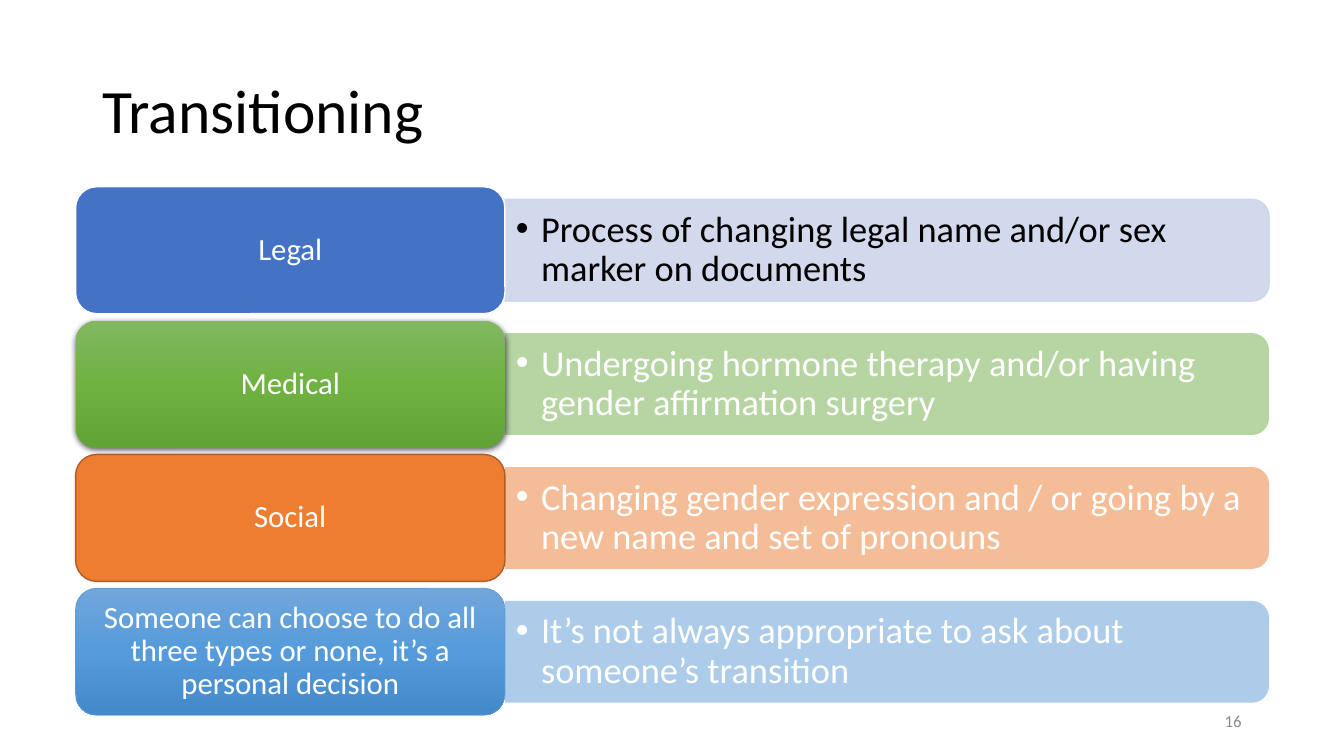
from lxml import etree
from pptx import Presentation
from pptx.dml.color import RGBColor
from pptx.enum.shapes import MSO_SHAPE
from pptx.enum.text import MSO_ANCHOR, PP_ALIGN
from pptx.oxml.ns import qn
from pptx.util import Pt

ROUND, TAB = MSO_SHAPE.ROUNDED_RECTANGLE, MSO_SHAPE.ROUND_2_SAME_RECTANGLE
MIDDLE = MSO_ANCHOR.MIDDLE
LEFT, CENTER, RIGHT = PP_ALIGN.LEFT, PP_ALIGN.CENTER, PP_ALIGN.RIGHT

COLORS = {
    "black": "000000", "white": "FFFFFF", "gray": "8C8C8C",
    "pale": "CFD5EA", "blue": "4472C4", "green": "70AD47",
    "orange": "ED7D31", "rust": "AF5C24", "sky": "5B9BD5",
}
GREENS = ("81B861", "6FB242", "62A336")
SKIES = ("71A6DB", "559BDB", "448ACA")

FONT = "Calibri"
LABEL_X, LABEL_W, LABEL_H = 54, 306.7, 90.7
BAR_X, BAR_W, BAR_H = 360.7, 545.8, 72.7
NOTE_W, NOTE_H = 542.2, 65.6
TOP, STEP = 133.4, 95.6

ROWS = [
    {"label": "Legal", "fill": "blue", "line": ("white", 1),
     "note": "Process of changing legal name and/or sex marker on documents",
     "ink": "black", "bar": "pale", "alpha": 90, "edge": ("pale", 1)},
    {"label": "Medical", "fill": GREENS, "shadow": True,
     "note": "Undergoing hormone therapy and/or having gender affirmation surgery",
     "bar": "green"},
    {"label": "Social", "fill": "orange", "line": ("rust", 1),
     "note": "Changing gender expression and / or going by a new name "
             "and set of pronouns",
     "bar": "orange"},
    {"label": "Someone can choose to do all three types or none, "
              "it’s a personal decision",
     "fill": SKIES, "line": ("sky", 0.5),
     "note": "It’s not always appropriate to ask about someone’s transition",
     "bar": "sky"},
]


def rgb(name):
    return RGBColor.from_string(COLORS[name])


def add_node(parent, tag, **attrs):
    node = etree.SubElement(parent, qn(tag))
    for key, value in attrs.items():
        node.set(key, str(value))
    return node


def set_alpha(shape, percent):
    """Make every colour of the shape's fill and line see-through."""
    for color in shape._element.spPr.iter(qn("a:srgbClr")):
        add_node(color, "a:alpha", val=percent * 1000)


def set_fade(shape, stops):
    """Fill from top to bottom with evenly spaced colours."""
    shape.fill.gradient()
    shape.fill.gradient_angle = 270
    stop_list = next(shape._element.spPr.iter(qn("a:gsLst")))
    for old in list(stop_list):
        stop_list.remove(old)
    for i, color in enumerate(stops):
        stop = add_node(stop_list, "a:gs", pos=i * 100000 // (len(stops) - 1))
        add_node(stop, "a:srgbClr", val=color)


def set_line(shape, line):
    if line is None:
        shape.line.fill.background()
        return
    name, width = line
    shape.line.color.rgb = rgb(name)
    shape.line.width = Pt(width)


def add_shadow(shape):
    effects = shape._element.spPr.find(qn("a:effectLst"))
    shadow = add_node(effects, "a:outerShdw", blurRad=Pt(4.5), dist=Pt(1.5),
                      dir=5400000, algn="ctr", rotWithShape=0)
    color = add_node(shadow, "a:srgbClr", val=COLORS["black"])
    add_node(color, "a:alpha", val=63000)


def add_form(slide, kind, box, fill, line):
    shape = slide.shapes.add_shape(kind, *map(Pt, box))
    shape.shadow.inherit = False
    if isinstance(fill, tuple):
        set_fade(shape, fill)
    else:
        shape.fill.solid()
        shape.fill.fore_color.rgb = rgb(fill)
    set_line(shape, line)
    return shape


def write(shape, text, size, color, align=LEFT, inset=7.2, space=0.9):
    frame = shape.text_frame
    frame.word_wrap = True
    frame.vertical_anchor = MIDDLE
    frame.margin_left = frame.margin_right = Pt(inset)
    frame.margin_top = frame.margin_bottom = Pt(3.6)
    para = frame.paragraphs[0]
    para.alignment = align
    para.line_spacing = space
    run = para.add_run()
    run.text = text
    run.font.name = FONT
    run.font.size = Pt(size)
    run.font.color.rgb = rgb(color)
    return para


def add_text(slide, box, *args, **style):
    return write(slide.shapes.add_textbox(*map(Pt, box)), *args, **style)


def add_bullet(para):
    props = para._p.get_or_add_pPr()
    props.set("marL", str(Pt(18)))
    props.set("indent", str(Pt(-18)))
    add_node(props, "a:buFont", typeface="Arial")
    add_node(props, "a:buChar", char="•")


def add_bar(slide, mid, row):
    """Place a tab turned by 90 degrees, so its round end faces right."""
    box = (BAR_X + (BAR_W - BAR_H) / 2, mid - BAR_W / 2, BAR_H, BAR_W)
    bar = add_form(slide, TAB, box, row["bar"], row.get("edge"))
    bar.rotation = 90
    set_alpha(bar, row.get("alpha", 50))
    para = add_text(slide, (BAR_X, mid - NOTE_H / 2, NOTE_W, NOTE_H),
                    row["note"], 26, row.get("ink", "white"), inset=7.8)
    add_bullet(para)


def add_label(slide, mid, row):
    box = (LABEL_X, mid - LABEL_H / 2, LABEL_W, LABEL_H)
    label = add_form(slide, ROUND, box, row["fill"], row.get("line"))
    if row.get("shadow"):
        add_shadow(label)
    write(label, row["label"], 22, "white", align=CENTER, inset=6.4)


def main():
    deck = Presentation()
    deck.slide_width, deck.slide_height = Pt(960), Pt(540)
    slide = deck.slides.add_slide(deck.slide_layouts[6])
    add_text(slide, (66, 28.8, 828, 104.4), "Transitioning", 44, "black")
    for i, row in enumerate(ROWS):
        mid = TOP + i * STEP + LABEL_H / 2
        add_bar(slide, mid, row)
        add_label(slide, mid, row)
    add_text(slide, (678, 500.4, 216, 28.8), "16", 12, "gray",
             align=RIGHT, space=1.0)
    deck.save("out.pptx")


if __name__ == "__main__":
    main()
